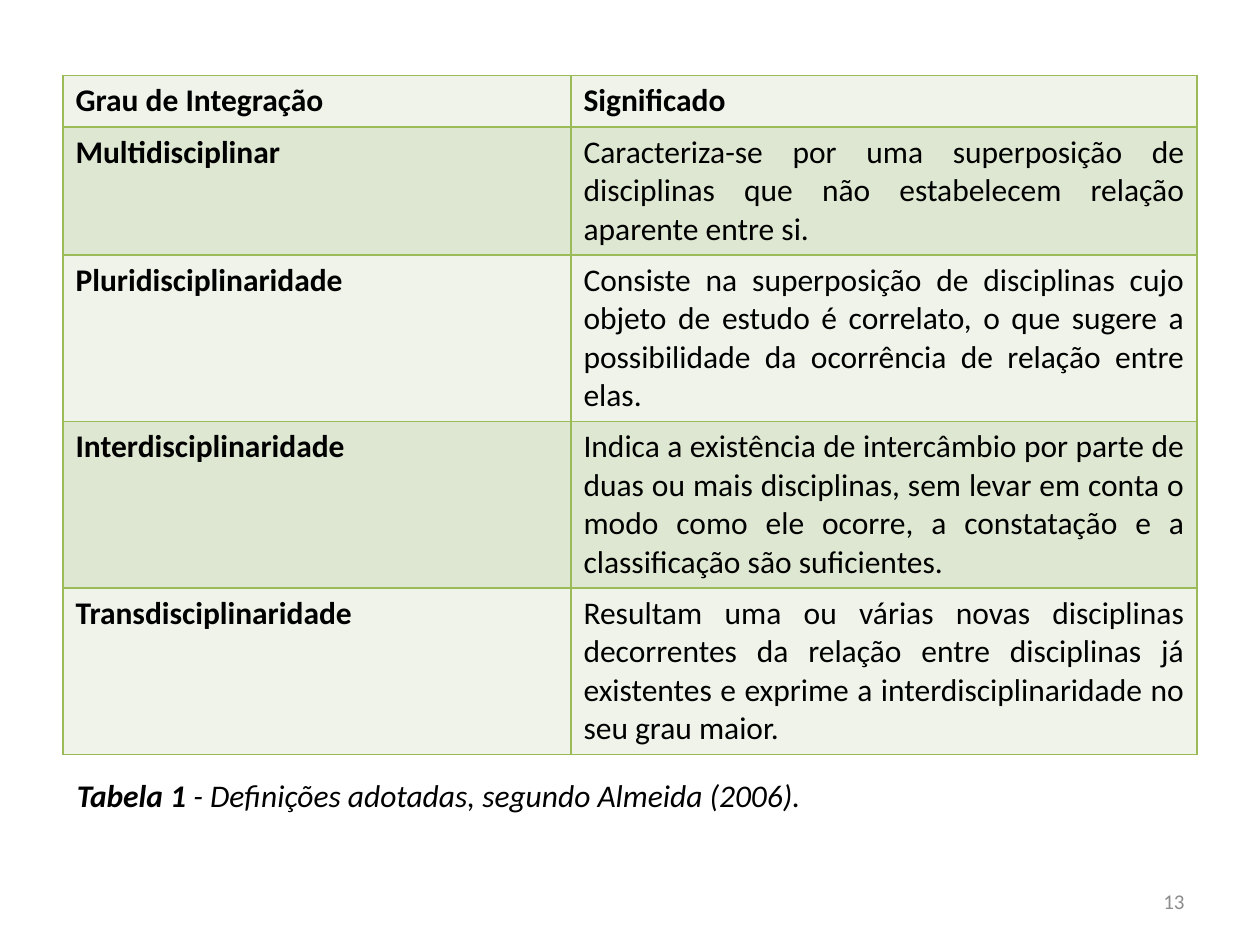
from lxml import etree
from pptx import Presentation
from pptx.dml.color import RGBColor
from pptx.enum.text import MSO_ANCHOR, MSO_AUTO_SIZE, PP_ALIGN
from pptx.oxml.ns import qn
from pptx.util import Cm, Pt

LEFT, RIGHT, JUST = PP_ALIGN.LEFT, PP_ALIGN.RIGHT, PP_ALIGN.JUSTIFY
TOP, MIDDLE = MSO_ANCHOR.TOP, MSO_ANCHOR.MIDDLE
GROW = MSO_AUTO_SIZE.SHAPE_TO_FIT_TEXT

ROWS = [
    ("Grau de Integração", "Significado"),
    ("Multidisciplinar",
     "Caracteriza-se por uma superposição de disciplinas que não "
     "estabelecem relação aparente entre si."),
    ("Pluridisciplinaridade",
     "Consiste na superposição de disciplinas cujo objeto de estudo "
     "é correlato, o que sugere a possibilidade da ocorrência de "
     "relação entre elas."),
    ("Interdisciplinaridade",
     "Indica a existência de intercâmbio por parte de duas ou mais "
     "disciplinas, sem levar em conta o modo como ele ocorre, a "
     "constatação e a classificação são suficientes."),
    ("Transdisciplinaridade",
     "Resultam uma ou várias novas disciplinas decorrentes da relação "
     "entre disciplinas já existentes e exprime a "
     "interdisciplinaridade no seu grau maior."),
]
CAPTION = [("Tabela 1 ", True),
           ("- Definições adotadas, segundo Almeida (2006).", False)]
NUMBER = "13"
BANDS = ["EFF3EA", "DEE7D1"]
BORDER, BLACK, GREY = "9BBB59", "000000", "8C8C8C"
WIDTHS = [10.24, 12.62]


def color(code):
    return RGBColor.from_string(code)


def style(para, size, code, align=LEFT):
    para.alignment = align
    font = para.font
    font.name, font.size = "Calibri", Pt(size)
    font.color.rgb = color(code)
    return font


def edge(cell):
    props = cell._tc.get_or_add_tcPr()
    for spot, tag in enumerate(("a:lnL", "a:lnR", "a:lnT", "a:lnB")):
        line = etree.Element(qn(tag), w=str(Pt(1)))
        fill = etree.SubElement(line, qn("a:solidFill"))
        etree.SubElement(fill, qn("a:srgbClr"), val=BORDER)
        props.insert(spot, line)


def add_grid(slide):
    frame = slide.shapes.add_table(
        len(ROWS), len(WIDTHS), Cm(1.27), Cm(1.52),
        Cm(sum(WIDTHS)), Cm(13.49))
    table = frame.table
    for col, width in zip(table.columns, WIDTHS):
        col.width = Cm(width)
    for i, texts in enumerate(ROWS):
        table.rows[i].height = Cm(1.04)
        for j, text in enumerate(texts):
            cell = table.cell(i, j)
            cell.text = text
            cell.fill.solid()
            cell.fill.fore_color.rgb = color(BANDS[i % 2])
            edge(cell)
            body = i > 0 and j > 0
            para = cell.text_frame.paragraphs[0]
            style(para, 18, BLACK, JUST if body else LEFT)
            para.runs[0].font.bold = not body
    frame.height = Cm(13.49)


def add_text(slide, box, anchor=TOP):
    frame = slide.shapes.add_textbox(*map(Cm, box)).text_frame
    frame.word_wrap = True
    frame.vertical_anchor = anchor
    return frame


def main():
    deck = Presentation()
    deck.slide_width, deck.slide_height = Cm(25.4), Cm(19.05)
    slide = deck.slides.add_slide(deck.slide_layouts[6])
    add_grid(slide)

    frame = add_text(slide, (1.3, 15.52, 19, 1.02))
    frame.auto_size = GROW
    para = frame.paragraphs[0]
    style(para, 18, BLACK).italic = True
    for text, bold in CAPTION:
        run = para.add_run()
        run.text = text
        run.font.bold = bold

    frame = add_text(slide, (18.2, 17.66, 5.93, 1.01), MIDDLE)
    frame.text = NUMBER
    style(frame.paragraphs[0], 12, GREY, RIGHT)
    deck.save("out.pptx")


if __name__ == "__main__":
    main()
